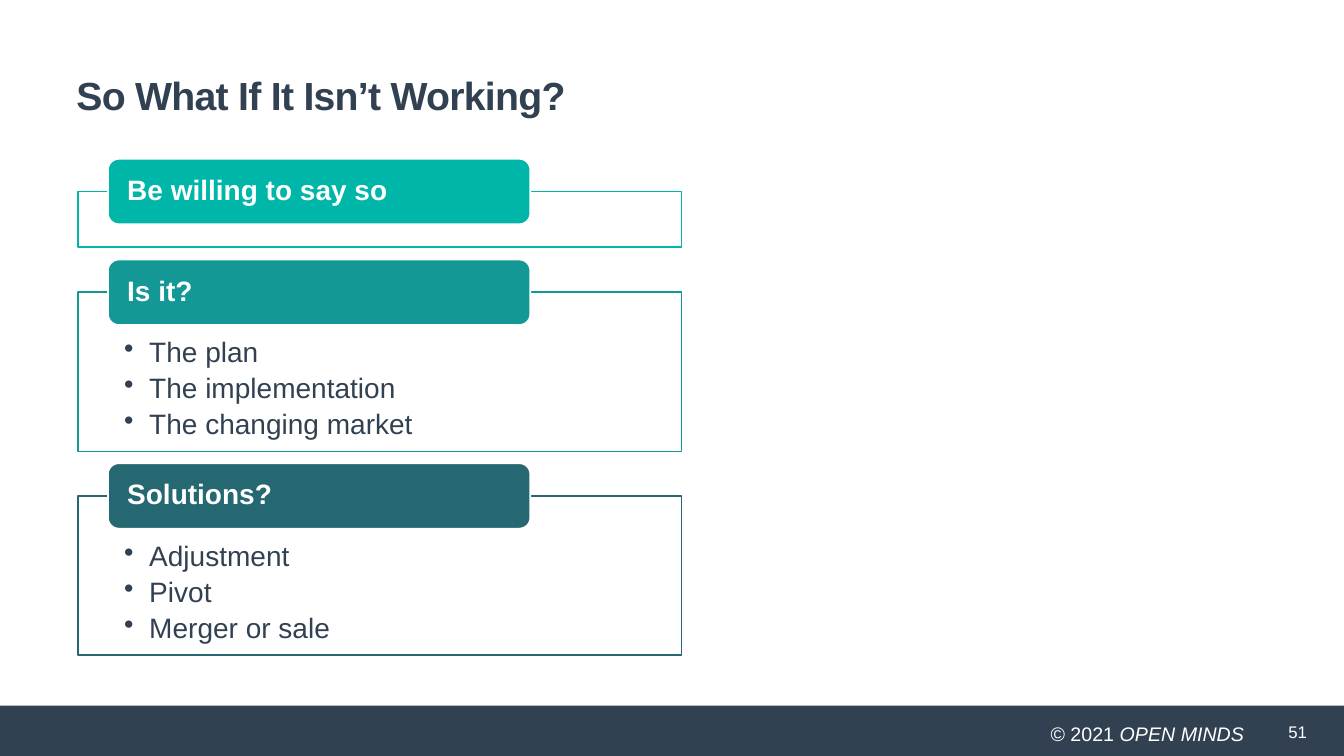
"""Build the slide "So What If It Isn't Working?" with three labelled panels."""
from dataclasses import dataclass

from lxml import etree
from pptx import Presentation
from pptx import util as u
from pptx.dml.color import RGBColor
from pptx.enum import shapes, text
from pptx.oxml.ns import qn


@dataclass(frozen=True)
class Theme:
    font: str = "Arial"
    navy: str = "324152"
    white: str = "FFFFFF"
    teals: tuple = ("00B6A9", "139896", "256871")
    title: int = 28
    body: int = 20
    footer: int = 14
    number: int = 12
    line: float = 1.25


def add_box(s, kind, box, fill=None, line=None):
    sp = s.shapes.add_shape(kind, *map(u.Inches, box))
    sp.shadow.inherit = False
    sp.fill.solid()
    sp.fill.fore_color.rgb = RGBColor.from_string(fill)
    if line:
        sp.line.color.rgb = RGBColor.from_string(line)
        sp.line.width = u.Pt(theme.line)
    else:
        sp.line.fill.background()
    return sp


def write(sp, lines, size, color, anchor, insets=(0.1, 0.05, 0.1, 0.05), align=text.PP_ALIGN.LEFT, bold=False):
    tf = sp.text_frame
    tf.word_wrap = True
    tf.vertical_anchor = anchor
    tf.margin_left, tf.margin_top, tf.margin_right, tf.margin_bottom = map(u.Inches, insets)
    tf.text = "\n".join(lines)
    for p in tf.paragraphs:
        p.alignment = align
        for r in p.runs:
            r.font.name = theme.font
            r.font.size = u.Pt(size)
            r.font.bold = bold
            r.font.color.rgb = RGBColor.from_string(color)
    return tf


theme = Theme()
TOP, MIDDLE = text.MSO_ANCHOR.TOP, text.MSO_ANCHOR.MIDDLE
RECT, ROUNDED = shapes.MSO_SHAPE.RECTANGLE, shapes.MSO_SHAPE.ROUNDED_RECTANGLE
panel_left, panel_width = 0.77, 5.99
label_left, label_width, label_height = 1.07, 4.19, 0.65
panels = [
    ("Be willing to say so", 1.9, 0.55, []),
    ("Is it?", 2.9, 1.58, ["The plan", "The implementation", "The changing market"]),
    ("Solutions?", 4.92, 1.58, ["Adjustment", "Pivot", "Merger or sale"]),
]

prs = Presentation()
prs.slide_width, prs.slide_height = u.Inches(13.33), u.Inches(7.5)
s = prs.slides.add_slide(prs.slide_layouts[6])

add_box(s, RECT, (0, 7, 13.33, 0.5), theme.navy)

sp = s.shapes.add_textbox(*map(u.Inches, (1.75, 7.12, 10.68, 0.32)))
tf = write(sp, ["© 2021 "], theme.footer, theme.white, TOP, (0.09, 0.04, 0.09, 0.04), text.PP_ALIGN.RIGHT)
r = tf.paragraphs[0].add_run()
r.text = "OPEN MINDS"
r.font.name = theme.font
r.font.size = u.Pt(theme.footer)
r.font.italic = True
r.font.color.rgb = RGBColor.from_string(theme.white)

sp = s.shapes.add_textbox(*map(u.Inches, (12.68, 7.06, 0.65, 0.4)))
write(sp, ["51"], theme.number, theme.white, MIDDLE)

sp = s.shapes.add_textbox(*map(u.Inches, (0.66, 0.41, 6.25, 1.07)))
tf = write(sp, ["So What If It Isn’t Working?"], theme.title, theme.navy, MIDDLE, bold=True)
tf.paragraphs[0].runs[0].font._element.set("spc", "-50")

for (label, top, height, bullets), teal in zip(panels, theme.teals):
    sp = add_box(s, RECT, (panel_left, top, panel_width, height), theme.white, teal)
    color = sp.fill._xPr.find(qn("a:solidFill"))[0]
    etree.SubElement(color, qn("a:alpha"), val="90000")
    if bullets:
        tf = write(sp, bullets, theme.body, theme.navy, TOP, (0.46, 0.46, 0.46, 0.16))
        for p in tf.paragraphs:
            p.level = 1
            p.line_spacing = 0.9
            p.space_after = u.Pt(4)
            pPr = p._p.get_or_add_pPr()
            pPr.set("marL", str(u.Inches(0.25)))
            pPr.set("indent", str(u.Inches(-0.25)))
            etree.SubElement(pPr, qn("a:buChar"), char="•")

    label_top = top - label_height / 2
    sp = add_box(s, ROUNDED, (label_left, label_top, label_width, label_height), teal, theme.white)
    tf = write(sp, [label], theme.body, theme.white, MIDDLE, (0.16, 0, 0.16, 0), bold=True)
    tf.paragraphs[0].line_spacing = 0.9

prs.save("out.pptx")
